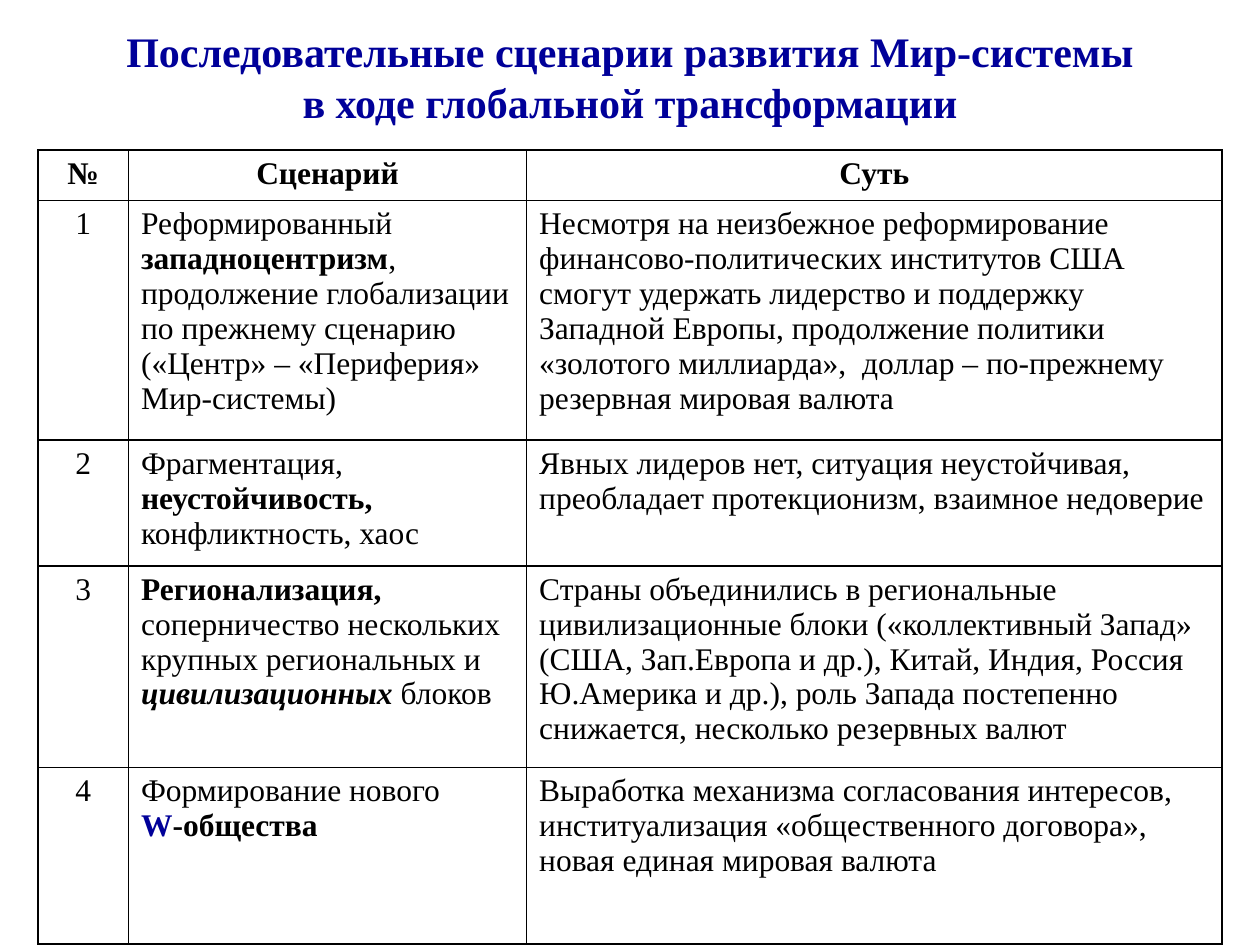
from dataclasses import dataclass

from lxml import etree
from pptx import Presentation
from pptx.dml.color import RGBColor
from pptx.enum import text
from pptx.oxml import ns
from pptx.util import Emu, Pt

PX = 9144
FONT = "Times New Roman"
BLACK, WHITE, NAVY = "000000", "FFFFFF", "000099"
COLUMN_WIDTHS = (72, 316, 552)
ROW_HEIGHTS = (40, 190, 100, 160, 140)
CENTER, LEFT = text.PP_ALIGN.CENTER, text.PP_ALIGN.LEFT


@dataclass(frozen=True)
class Run:
    words: str
    bold: bool = False
    italic: bool = False
    color: str = BLACK


@dataclass(frozen=True)
class Scenario:
    name: list[list[Run]]
    essence: str


TITLE = (
    "Последовательные сценарии развития Мир-системы",
    "в ходе глобальной трансформации",
)
HEADINGS = ("№", "Сценарий", "Суть")
SCENARIOS = (
    Scenario(
        [
            [Run("Реформированный "), Run("западноцентризм", bold=True), Run(",")],
            [Run("продолжение глобализации по прежнему сценарию "
                 "(«Центр» – «Периферия» Мир-системы)")],
        ],
        "Несмотря на неизбежное реформирование финансово-политических институтов "
        "США смогут удержать лидерство и поддержку Западной Европы, продолжение "
        "политики «золотого миллиарда»,  доллар – по-прежнему резервная мировая валюта",
    ),
    Scenario(
        [[Run("Фрагментация, "), Run("неустойчивость, ", bold=True),
          Run("конфликтность, хаос")]],
        "Явных лидеров нет, ситуация неустойчивая, преобладает протекционизм, "
        "взаимное недоверие",
    ),
    Scenario(
        [[Run("Регионализация, ", bold=True),
          Run("соперничество нескольких крупных региональных и "),
          Run("цивилизационных", bold=True, italic=True), Run(" блоков")]],
        "Страны объединились в региональные цивилизационные блоки («коллективный "
        "Запад» (США, Зап.Европа и др.), Китай, Индия, Россия  Ю.Америка и др.), "
        "роль Запада постепенно снижается, несколько резервных валют",
    ),
    Scenario(
        [[Run("Формирование нового")],
         [Run("W", bold=True, color=NAVY), Run("-общества", bold=True)]],
        "Выработка механизма согласования интересов, институализация "
        "«общественного договора», новая единая мировая валюта",
    ),
)


def px(length: int) -> Emu:
    return Emu(length * PX)


def rgb(color: str) -> RGBColor:
    return RGBColor.from_string(color)


def apply(target, values: dict) -> None:
    for name, value in values.items():
        setattr(target, name, value)


def write(frame, paragraphs: list[list[Run]], size: int, alignment) -> None:
    for index, runs in enumerate(paragraphs):
        paragraph = frame.add_paragraph() if index else frame.paragraphs[0]
        paragraph.alignment = alignment
        for item in runs:
            run = paragraph.add_run()
            run.text = item.words
            apply(run.font, {"name": FONT, "size": Pt(size),
                             "bold": item.bold, "italic": item.italic})
            run.font.color.rgb = rgb(item.color)


def add_borders(cell) -> None:
    properties = cell._tc.get_or_add_tcPr()
    for side in ("lnL", "lnR", "lnT", "lnB"):
        line = etree.SubElement(properties, ns.qn(f"a:{side}"), w=str(Pt(1)))
        fill = etree.SubElement(line, ns.qn("a:solidFill"))
        etree.SubElement(fill, ns.qn("a:srgbClr"), val=BLACK)


def fill_cell(cell, paragraphs: list[list[Run]], alignment) -> None:
    add_borders(cell)
    cell.fill.solid()
    cell.fill.fore_color.rgb = rgb(WHITE)
    apply(cell, {"margin_left": px(10), "margin_right": px(10),
                 "margin_top": px(5), "margin_bottom": px(5)})
    write(cell.text_frame, paragraphs, 18, alignment)


def add_title(slide) -> None:
    title = slide.shapes.title
    apply(title, {"left": px(0), "top": px(16), "width": px(1000), "height": px(89)})
    margins = {f"margin_{side}": px(4) for side in ("left", "right", "top", "bottom")}
    apply(title.text_frame, {
        **margins,
        "word_wrap": True,
        "auto_size": text.MSO_AUTO_SIZE.SHAPE_TO_FIT_TEXT,
        "vertical_anchor": text.MSO_ANCHOR.MIDDLE,
    })
    lines = [[Run(line, bold=True, color=NAVY)] for line in TITLE]
    write(title.text_frame, lines, 24, CENTER)


def add_scenarios(slide) -> None:
    table = slide.shapes.add_table(
        len(ROW_HEIGHTS), len(COLUMN_WIDTHS), px(30), px(119),
        px(sum(COLUMN_WIDTHS)), px(sum(ROW_HEIGHTS)),
    ).table
    apply(table, {"first_row": False, "horz_banding": False})
    for column, width in zip(table.columns, COLUMN_WIDTHS):
        column.width = px(width)
    for row, height in zip(table.rows, ROW_HEIGHTS):
        row.height = px(height)
    for column, heading in enumerate(HEADINGS):
        fill_cell(table.cell(0, column), [[Run(heading, bold=True)]], CENTER)
    for number, scenario in enumerate(SCENARIOS, 1):
        fill_cell(table.cell(number, 0), [[Run(str(number))]], CENTER)
        fill_cell(table.cell(number, 1), scenario.name, LEFT)
        fill_cell(table.cell(number, 2), [[Run(scenario.essence)]], LEFT)


def main() -> None:
    presentation = Presentation()
    apply(presentation, {"slide_width": px(1000), "slide_height": px(750)})
    slide = presentation.slides.add_slide(presentation.slide_layouts[5])
    add_title(slide)
    add_scenarios(slide)
    presentation.save("out.pptx")


if __name__ == "__main__":
    main()
